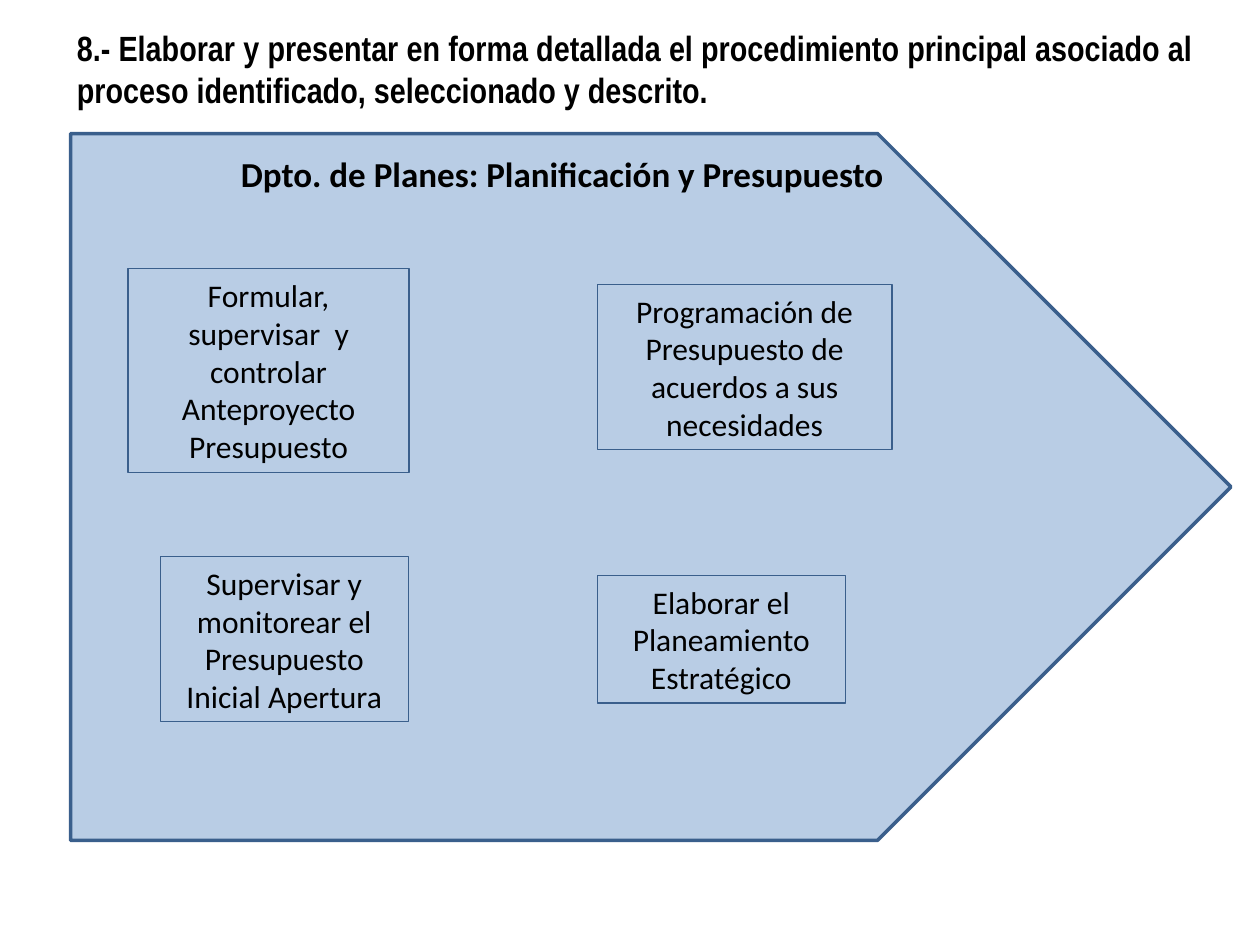
from pptx import Presentation
from pptx.dml.color import RGBColor
from pptx.enum.shapes import MSO_SHAPE
from pptx.enum.text import MSO_ANCHOR, MSO_AUTO_SIZE, PP_ALIGN
from pptx.util import Pt

PLATE, RECT = MSO_SHAPE.PENTAGON, MSO_SHAPE.RECTANGLE
TOP, MIDDLE = MSO_ANCHOR.TOP, MSO_ANCHOR.MIDDLE
CENTER, JUSTIFY = PP_ALIGN.CENTER, PP_ALIGN.JUSTIFY
NO_FIT = MSO_AUTO_SIZE.NONE
BLUE, PALE, BLACK = "3A5F8C", "B9CDE5", "000000"


def color(code):
    return RGBColor.from_string(code)


def write(shape, text, size, face="Calibri", bold=False, align=CENTER, anchor=TOP):
    frame = shape.text_frame
    frame.text = text
    frame.word_wrap = True
    frame.auto_size = NO_FIT
    frame.vertical_anchor = anchor
    for para in frame.paragraphs:
        para.alignment = align
        para.font.name = face
        para.font.size = Pt(size)
        para.font.bold = bold
        para.font.color.rgb = color(BLACK)


deck = Presentation()
deck.slide_width, deck.slide_height = Pt(720), Pt(540)
slide = deck.slides.add_slide(deck.slide_layouts[5])

title = slide.shapes.title
title.left, title.top, title.width, title.height = Pt(36.7), Pt(11.5), Pt(652.3), Pt(55.4)
write(title, "8.- Elaborar y presentar en forma detallada el procedimiento principal "
      "asociado al proceso identificado, seleccionado y descrito.",
      20, "Arial Narrow", True, JUSTIFY)

plate = slide.shapes.add_shape(PLATE, Pt(40.3), Pt(76.3), Pt(663.1), Pt(403.9))
plate.shadow.inherit = False
plate.fill.solid()
plate.fill.fore_color.rgb = color(PALE)
plate.line.color.rgb = color(BLUE)
plate.line.width = Pt(2)
write(plate, "Dpto. de Planes: Planificación y Presupuesto", 20, bold=True)
plate.text_frame.margin_top = Pt(11)

tasks = [
    (341.3, 162.7, 168.5, 94.3, "Programación de Presupuesto de acuerdos a sus necesidades"),
    (341.3, 329, 141.8, 72.7, "Elaborar el Planeamiento Estratégico"),
    (91.6, 318.2, 141.8, 94.3, "Supervisar y monitorear el Presupuesto Inicial Apertura"),
    (73.2, 153.4, 160.6, 116.6, "Formular, supervisar  y controlar\nAnteproyecto Presupuesto"),
]
for left, top, width, height, text in tasks:
    box = slide.shapes.add_shape(RECT, Pt(left), Pt(top), Pt(width), Pt(height))
    box.shadow.inherit = False
    box.fill.background()
    box.line.color.rgb = color(BLUE)
    box.line.width = Pt(0.75)
    write(box, text, 18, anchor=MIDDLE)

deck.save("out.pptx")
